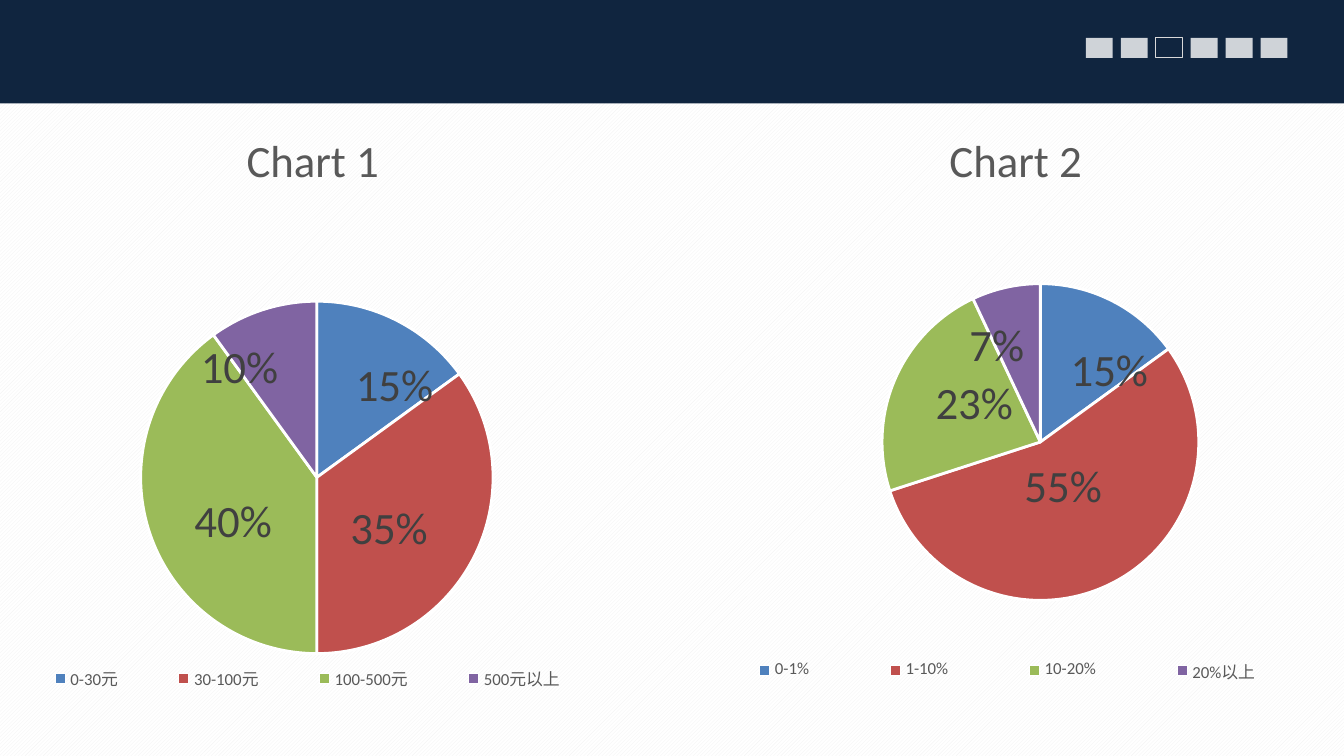
from dataclasses import dataclass

from lxml import etree
from pptx import Presentation
from pptx.chart.data import CategoryChartData
from pptx.dml.color import RGBColor
from pptx.enum.chart import XL_CHART_TYPE, XL_LABEL_POSITION, XL_LEGEND_POSITION
from pptx.enum.dml import MSO_PATTERN
from pptx.enum.shapes import MSO_SHAPE
from pptx.oxml.ns import qn
from pptx.util import Inches, Pt

PIE = XL_CHART_TYPE.PIE
CENTER = XL_LABEL_POSITION.CENTER
BOTTOM = XL_LEGEND_POSITION.BOTTOM
RECT = MSO_SHAPE.RECTANGLE
HATCH = MSO_PATTERN.LIGHT_UPWARD_DIAGONAL


@dataclass(frozen=True)
class Theme:
    font: str = "Calibri"
    navy: str = "10253F"
    white: str = "FFFFFF"
    pale: str = "F2F2F2"
    rim: str = "D9D9D9"
    grey: str = "595959"
    dark: str = "404040"
    slices: tuple = ("4F81BD", "C0504D", "9BBB59", "8064A2")
    large: int = 24
    base: int = 10
    small: int = 9


def rgb(code):
    return RGBColor.from_string(code)


def place(node, index, edge=True, **sides):
    for old in node.findall(qn("c:layout")):
        node.remove(old)
    layout = etree.Element(qn("c:layout"))
    manual = etree.SubElement(layout, qn("c:manualLayout"))
    if edge:
        for mode in ("xMode", "yMode"):
            etree.SubElement(manual, qn(f"c:{mode}")).set("val", "edge")
    for side, share in sides.items():
        etree.SubElement(manual, qn(f"c:{side}")).set("val", str(share))
    node.insert(index, layout)


class Deck:
    def __init__(self, theme, width, height):
        self.theme = theme
        self.prs = Presentation()
        self.prs.slide_width = Inches(width)
        self.prs.slide_height = Inches(height)
        self.slide = self.prs.slides.add_slide(self.prs.slide_layouts[6])

    def frame(self, left, top, width, height):
        wide, high = self.prs.slide_width, self.prs.slide_height
        return int(left * wide), int(top * high), int(width * wide), int(height * high)

    def ground(self):
        fill = self.slide.background.fill
        fill.patterned()
        fill.pattern = HATCH
        fill.fore_color.rgb = rgb(self.theme.pale)
        fill.back_color.rgb = rgb(self.theme.white)

    def style(self, font, size, color):
        font.name = self.theme.font
        font.size = Pt(size)
        font.bold = False
        font.color.rgb = rgb(color)

    def box(self, area, fill=None, alpha=None, line=None):
        shape = self.slide.shapes.add_shape(RECT, *self.frame(*area))
        shape.shadow.inherit = False
        if fill:
            shape.fill.solid()
            shape.fill.fore_color.rgb = rgb(fill)
        else:
            shape.fill.background()
        if alpha:
            color = shape.fill._xPr.find(qn("a:solidFill"))[0]
            etree.SubElement(color, qn("a:alpha")).set("val", str(alpha * 1000))
        if line:
            shape.line.color.rgb = rgb(line)
            shape.line.width = Pt(0.5)
        else:
            shape.line.fill.background()

    def pie(self, area, title, cats, values, shifts, plot, head, key):
        theme = self.theme
        data = CategoryChartData()
        data.categories = cats
        data.add_series("Series 1", values)
        chart = self.slide.shapes.add_chart(PIE, *self.frame(*area), data).chart
        chart.font.name = theme.font
        chart.font.size = Pt(theme.base)

        chart.has_title = True
        text = chart.chart_title.text_frame
        text.text = title
        self.style(text.paragraphs[0].font, theme.large, theme.grey)
        place(chart.chart_title._element, 1, **head)

        chart.has_legend = True
        legend = chart.legend
        legend.position = BOTTOM
        legend.include_in_layout = False
        self.style(legend.font, theme.small, theme.grey)
        place(legend._element, 1, **key)

        place(chart._chartSpace.xpath("c:chart/c:plotArea")[0], 0, **plot)
        chart.plots[0].vary_by_categories = True
        series = chart.plots[0].series[0]
        for index, (value, color) in enumerate(zip(values, theme.slices)):
            point = series.points[index]
            point.format.fill.solid()
            point.format.fill.fore_color.rgb = rgb(color)
            point.format.line.color.rgb = rgb(theme.white)
            point.format.line.width = Pt(1.5)
            label = point.data_label
            run = label.text_frame.paragraphs[0].add_run()
            run.text = f"{value}%"
            self.style(run.font, theme.large, theme.dark)
            label.position = CENTER
        for node, (x, y) in zip(series._element.xpath("c:dLbls/c:dLbl"), shifts):
            place(node, 1, edge=False, x=x, y=y)


def main():
    theme = Theme()
    wide, high = 10, 5.625
    deck = Deck(theme, wide, high)
    deck.ground()
    bar = 0.77 / high
    deck.box((0, 0, 1, bar), theme.navy)
    for step in range(6):
        area = ((8.08 + 0.26 * step) / wide, 0.05, 0.02, 0.15 / high)
        if step == 2:
            deck.box(area, line=theme.rim)
        else:
            deck.box(area, theme.white, alpha=80)

    key = dict(x=0, y=0.9, w=0.98, h=0.06)
    deck.pie(
        (0, bar, 0.467, 4.6 / high), "Chart 1",
        ("0-30元", "30-100元", "100-500元", "500元以上"), (15, 35, 40, 10),
        ((0.06, -0.02), (-0.01, 0.02), (0, 0.03), (-0.08, -0.04)),
        plot=dict(x=0.22, y=0.32, w=0.57, h=0.57),
        head=dict(x=0.38, y=0.03),
        key=key,
    )
    deck.pie(
        (0.509, bar, 0.491, 4.54 / high), "Chart 2",
        ("0-1%", "1-10%", "10-20%", "20%以上"), (15, 55, 23, 7),
        ((0.05, 0), (-0.02, -0.04), (0.01, -0.01), (-0.04, -0.03)),
        plot=dict(x=0.3, y=0.29, w=0.48, h=0.53),
        head=dict(x=0.39, y=0.03),
        key=key,
    )
    deck.prs.save("out.pptx")


if __name__ == "__main__":
    main()
